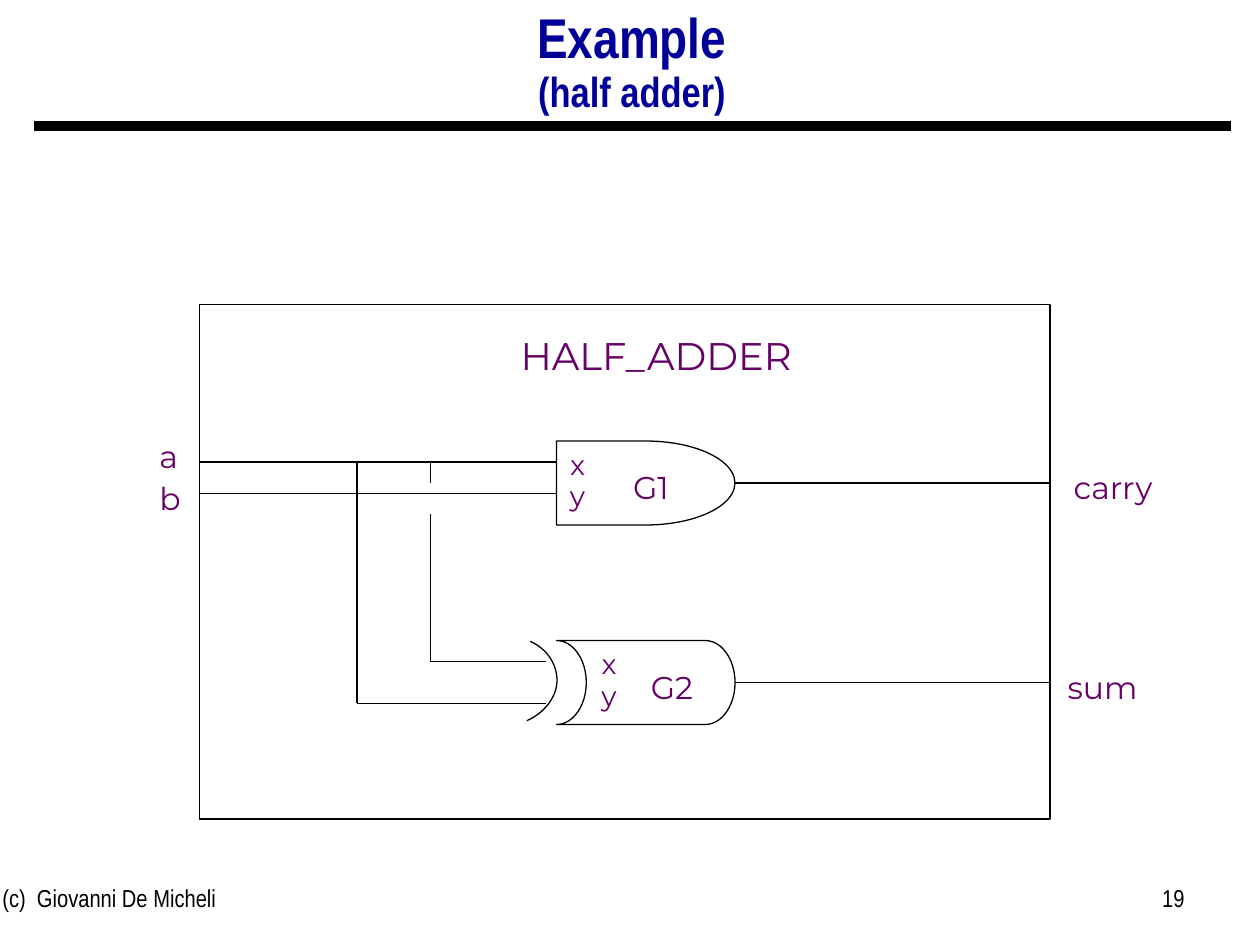
from dataclasses import dataclass

from lxml import etree
from pptx import Presentation
from pptx.dml.color import RGBColor
from pptx.enum.shapes import MSO_CONNECTOR, MSO_SHAPE
from pptx.enum.text import MSO_ANCHOR, PP_ALIGN
from pptx.oxml.ns import qn
from pptx.util import Cm, Pt

STRAIGHT = MSO_CONNECTOR.STRAIGHT
RECTANGLE = MSO_SHAPE.RECTANGLE
AND_GATE = MSO_SHAPE.FLOWCHART_DELAY
XOR_GATE = MSO_SHAPE.FLOWCHART_STORED_DATA
LEFT, CENTER, RIGHT = PP_ALIGN.LEFT, PP_ALIGN.CENTER, PP_ALIGN.RIGHT
MIDDLE = MSO_ANCHOR.MIDDLE


@dataclass(frozen=True)
class Theme:
    title_color: RGBColor = RGBColor(0x00, 0x00, 0x99)
    label_color: RGBColor = RGBColor(0x66, 0x00, 0x66)
    black: RGBColor = RGBColor(0x00, 0x00, 0x00)
    text_font: str = "Arial Narrow"
    label_font: str = "Montserrat"
    title_size: Pt = Pt(32)
    subtitle_size: Pt = Pt(24)
    block_size: Pt = Pt(22)
    label_size: Pt = Pt(18)
    pin_size: Pt = Pt(16)
    footer_size: Pt = Pt(14)
    rule_width: Pt = Pt(6)
    wire_width: Pt = Pt(0.75)


THEME = Theme()

# The circuit sits on a grid of twelve steps to 2.54 cm.
# Wires: x1, y1, x2, y2 in grid steps.
WIRES = [
    (19, 44, 53, 44),
    (19, 47, 53, 47),
    (41, 44, 41, 46),
    (41, 49, 41, 63),
    (41, 63, 52, 63),
    (34, 44, 34, 67),
    (34, 67, 52, 67),
    (70, 46, 100, 46),
    (70, 65, 100, 65),
]
# Labels: text, left, top, width in grid steps, size.
LABELS = [
    ("HALF_ADDER", 47, 31, 31, THEME.block_size),
    ("a", 14, 41, 4, THEME.label_size),
    ("b", 14, 45, 4, THEME.label_size),
    ("carry", 98, 44, 16, THEME.label_size),
    ("sum", 97, 63, 16, THEME.label_size),
    ("G1", 58, 44, 8, THEME.label_size),
    ("G2", 59, 63, 10, THEME.label_size),
    ("x", 53, 42, 4, THEME.pin_size),
    ("y", 53, 45, 4, THEME.pin_size),
    ("x", 56, 61, 4, THEME.pin_size),
    ("y", 56, 64, 4, THEME.pin_size),
]
# Halves of the second input arc of the XOR gate: Bezier points in cm.
ARC_HALVES = [
    [(10.69, 12.93), (11.03, 13.08), (11.23, 13.39), (11.23, 13.72)],
    [(11.23, 13.72), (11.23, 14.05), (10.97, 14.38), (10.62, 14.53)],
]
ARC_STEPS = 16


def grid(steps):
    return round(Cm(2.54) * steps / 12)


def set_font(font, name, size, color, bold=False):
    font.name, font.size, font.bold = name, size, bold
    font.color.rgb = color


def add_title(page, heading, subheading):
    title = page.shapes.title
    title.left, title.top = Cm(0.66), Cm(0.33)
    title.width, title.height = Cm(24.16), Cm(1.9)
    title.text_frame.vertical_anchor = MIDDLE
    para = title.text_frame.paragraphs[0]
    para.alignment, para.line_spacing = CENTER, 0.9
    set_font(para.font, THEME.text_font, THEME.title_size, THEME.title_color, True)
    para.add_run().text = heading
    para.add_line_break()
    span = para.add_run()
    span.text = subheading
    span.font.size = THEME.subtitle_size


def add_text(page, text, left, top, width, height, align, name, size, color):
    box = page.shapes.add_textbox(left, top, width, height)
    box.text_frame.word_wrap = True
    para = box.text_frame.paragraphs[0]
    para.text, para.alignment = text, align
    set_font(para.font, name, size, color)


def add_label(page, text, left, top, width, size):
    add_text(page, text, grid(left), grid(top), grid(width), grid(5.4),
             CENTER, THEME.label_font, size, THEME.label_color)


def add_footer(page, text, left, width, align):
    add_text(page, text, left, Cm(17.67), width, Cm(1.32),
             align, THEME.text_font, THEME.footer_size, THEME.black)


def add_line(page, x1, y1, x2, y2, width):
    line = page.shapes.add_connector(STRAIGHT, x1, y1, x2, y2)
    line.line.color.rgb, line.line.width = THEME.black, width
    etree.SubElement(line._element.spPr, qn("a:effectLst"))


def outline(shape):
    shape.shadow.inherit = False
    shape.fill.background()
    shape.line.color.rgb, shape.line.width = THEME.black, THEME.wire_width


def add_part(page, kind, left, top, width, height, rotation=0):
    part = page.shapes.add_shape(kind, *map(grid, (left, top, width, height)))
    part.rotation = rotation
    outline(part)


def bezier_point(points, t):
    weights = ((1 - t) ** 3, 3 * t * (1 - t) ** 2, 3 * t * t * (1 - t), t ** 3)
    return tuple(Cm(sum(weight * point[axis] for weight, point in zip(weights, points)))
                 for axis in (0, 1))


def add_input_arc(page):
    points = [bezier_point(half, step / ARC_STEPS)
              for half in ARC_HALVES for step in range(ARC_STEPS + 1)]
    builder = page.shapes.build_freeform(*points[0])
    builder.add_line_segments(points[1:], close=False)
    outline(builder.convert_to_shape())


def main():
    deck = Presentation()
    deck.slide_width, deck.slide_height = Cm(25.4), Cm(19.05)
    page = deck.slides.add_slide(deck.slide_layouts[5])

    add_title(page, "Example", "(half adder)")
    add_line(page, Cm(0.69), Cm(2.54), Cm(24.82), Cm(2.54), THEME.rule_width)
    add_footer(page, "(c)  Giovanni De Micheli", Cm(-0.2), Cm(8.05), LEFT)
    add_footer(page, "19", Cm(18.21), Cm(5.92), RIGHT)

    add_part(page, RECTANGLE, 19, 29, 81, 49)
    add_part(page, AND_GATE, 53, 42, 17, 8)
    add_part(page, XOR_GATE, 53, 61, 17, 8, rotation=180)
    add_input_arc(page)
    for wire in WIRES:
        add_line(page, *map(grid, wire), THEME.wire_width)
    for label in LABELS:
        add_label(page, *label)

    deck.save("out.pptx")


if __name__ == "__main__":
    main()
